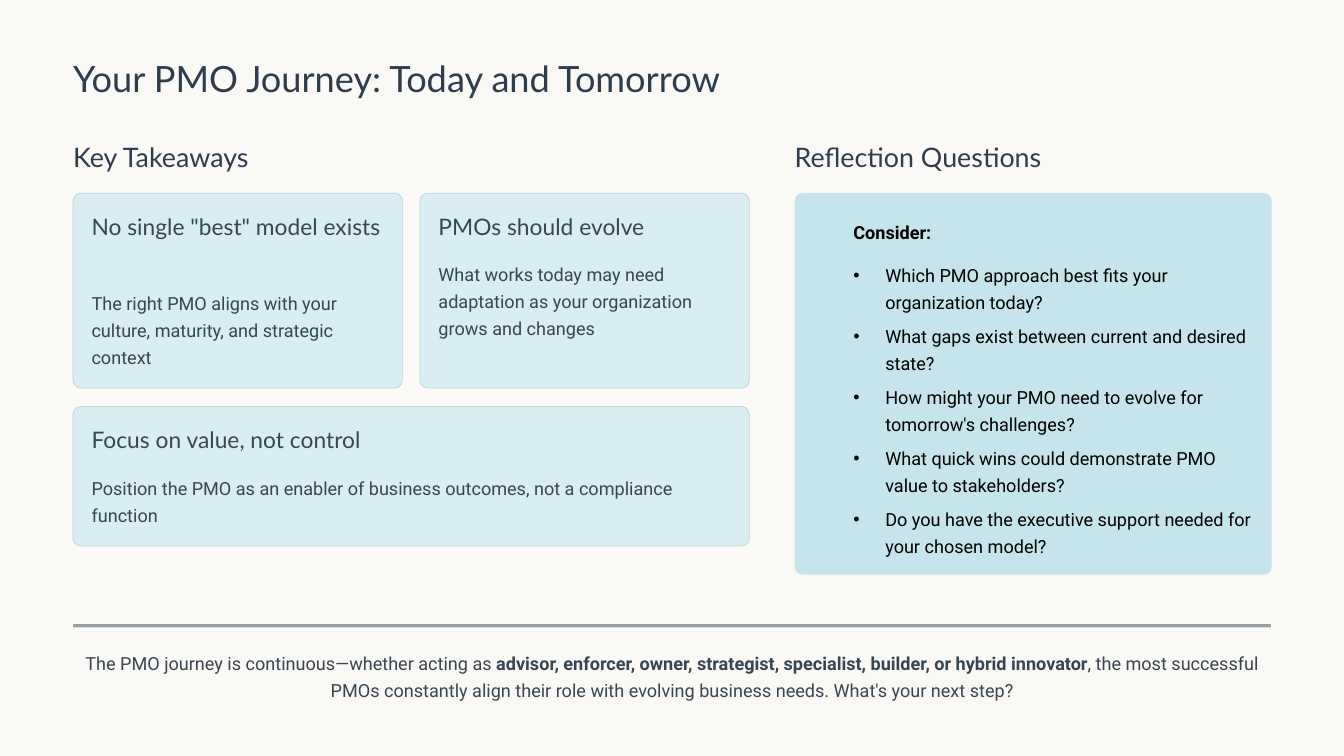
from lxml import etree
from pptx import Presentation
from pptx.dml.color import RGBColor
from pptx.enum.shapes import MSO_SHAPE
from pptx.enum.text import MSO_ANCHOR, MSO_AUTO_SIZE, PP_ALIGN
from pptx.oxml.ns import qn
from pptx.util import Inches, Pt

ROUNDED, RECTANGLE = MSO_SHAPE.ROUNDED_RECTANGLE, MSO_SHAPE.RECTANGLE
LEFT, CENTER = PP_ALIGN.LEFT, PP_ALIGN.CENTER
TOP = MSO_ANCHOR.TOP
NO_AUTOFIT = MSO_AUTO_SIZE.NONE

HEADING_FONT, BODY_FONT = "Lato", "Roboto"
PAPER, NAVY, SLATE, BLACK = "FAF9F5", "2E3C4E", "384653", "000000"
CARD_FILL, CARD_EDGE, PANEL_FILL = "D9EDF2", "BFD3D8", "C6E4EB"

# Font, size, line spacing
TITLE = (HEADING_FONT, 31, 39)
SECTION = (HEADING_FONT, 23, 29)
CARD_HEAD = (HEADING_FONT, 19.5, 24)
BODY = (BODY_FONT, 15.5, 23)

MARGIN = 0.87
PANEL_LEFT = 9.46
CARDS_TOP = 2.3
CARD_WIDTH, CARD_HEIGHT = 3.92, 2.32
CARD_GAP = 0.21
CARD_PAD = 0.22
CONTENT_WIDTH = 14.26


def rgb(value):
    return RGBColor.from_string(value)


class SlideBuilder:
    def __init__(self, slide):
        self.slide = slide
        slide.background.fill.solid()
        slide.background.fill.fore_color.rgb = rgb(PAPER)

    def place(self, holder, left, top, width, height):
        holder.left, holder.top = Inches(left), Inches(top)
        holder.width, holder.height = Inches(width), Inches(height)

    def frame(self, holder):
        frame = holder.text_frame
        frame.margin_left = frame.margin_right = 0
        frame.margin_top = frame.margin_bottom = 0
        frame.word_wrap = True
        frame.auto_size = NO_AUTOFIT
        frame.vertical_anchor = TOP
        return frame

    def style(self, paragraph, style, color, align=LEFT, bold=False):
        font_name, size, spacing = style
        paragraph.alignment = align
        paragraph.line_spacing = Pt(spacing)
        paragraph.space_before = Pt(0)
        font = paragraph.font
        font.name, font.size = font_name, Pt(size)
        font.color.rgb = rgb(color)
        if bold:
            font.bold = True

    def title(self, text, *box):
        title = self.slide.shapes.title
        self.place(title, *box)
        paragraph = self.frame(title).paragraphs[0]
        paragraph.text = text
        self.style(paragraph, TITLE, NAVY)

    def bullets(self, items, *box):
        body = self.slide.placeholders[1]
        self.place(body, *box)
        frame = self.frame(body)
        frame.text = "\n".join(items)
        for paragraph in frame.paragraphs:
            self.style(paragraph, BODY, BLACK)
            paragraph.space_after = Pt(6.35)
            properties = paragraph._p.get_or_add_pPr()
            properties.set("marL", str(Inches(0.38)))
            properties.set("indent", str(-Inches(0.38)))
            bullet = etree.Element(qn("a:buChar"), char="•")
            properties.find(qn("a:spcAft")).addnext(bullet)

    def text(self, runs, left, top, width, height, style, color,
             align=LEFT, bold=False):
        """runs is a string, or a list of (text, bold) pairs."""
        box = self.slide.shapes.add_textbox(
            Inches(left), Inches(top), Inches(width), Inches(height))
        paragraph = self.frame(box).paragraphs[0]
        self.style(paragraph, style, color, align, bold)
        if isinstance(runs, str):
            paragraph.text = runs
            return
        for words, strong in runs:
            run = paragraph.add_run()
            run.text = words
            run.font.bold = strong

    def shape(self, kind, left, top, width, height, fill, edge=None, radius=None):
        shape = self.slide.shapes.add_shape(
            kind, Inches(left), Inches(top), Inches(width), Inches(height))
        shape.shadow.inherit = False
        shape.fill.solid()
        shape.fill.fore_color.rgb = rgb(fill)
        if edge:
            shape.line.color.rgb = rgb(edge)
            shape.line.width = Pt(0.6)
        else:
            shape.line.fill.background()
        if radius:
            shape.adjustments[0] = radius / min(width, height)
        return shape

    def card(self, heading, detail, left, top, width, height, heading_height=0.34):
        self.shape(ROUNDED, left, top, width, height, CARD_FILL, CARD_EDGE, 0.09)
        text_left, text_top = left + CARD_PAD, top + CARD_PAD
        text_width = width - 2 * CARD_PAD
        detail_top = text_top + heading_height + CARD_PAD
        self.text(heading, text_left, text_top, text_width, heading_height,
                  CARD_HEAD, SLATE)
        self.text(detail, text_left, detail_top, text_width,
                  top + height - CARD_PAD - detail_top, BODY, SLATE)

    def rule(self, left, top, width, height):
        rule = self.shape(RECTANGLE, left, top, width, height, SLATE)
        color = rule.fill._xPr.find(qn("a:solidFill"))[0]
        etree.SubElement(color, qn("a:alpha"), val="50000")


def main():
    prs = Presentation()
    prs.slide_width, prs.slide_height = Inches(16), Inches(9)
    page = SlideBuilder(prs.slides.add_slide(prs.slide_layouts[1]))

    page.title("Your PMO Journey: Today and Tomorrow", MARGIN, 0.64, 9, 0.54)

    # Section headings
    for heading, left in (("Key Takeaways", MARGIN),
                          ("Reflection Questions", PANEL_LEFT)):
        page.text(heading, left, 1.65, 3.26, 0.41, SECTION, NAVY)

    # Takeaway cards
    page.card('No single "best" model exists',
              "The right PMO aligns with your culture, maturity, and strategic context",
              MARGIN, CARDS_TOP, CARD_WIDTH, CARD_HEIGHT, heading_height=0.68)
    page.card("PMOs should evolve",
              "What works today may need adaptation as your organization grows and changes",
              MARGIN + CARD_WIDTH + CARD_GAP, CARDS_TOP, CARD_WIDTH, CARD_HEIGHT)
    page.card("Focus on value, not control",
              "Position the PMO as an enabler of business outcomes, "
              "not a compliance function",
              MARGIN, CARDS_TOP + CARD_HEIGHT + CARD_PAD,
              2 * CARD_WIDTH + CARD_GAP, 1.66)

    # Reflection panel
    panel = page.shape(ROUNDED, PANEL_LEFT, CARDS_TOP, 5.68, 4.54,
                       PANEL_FILL, radius=0.09)
    page.text("Consider:", 10.16, 2.57, 4.76, 0.33, BODY, BLACK, bold=True)
    page.bullets([
        "Which PMO approach best fits your organization today?",
        "What gaps exist between current and desired state?",
        "How might your PMO need to evolve for tomorrow's challenges?",
        "What quick wins could demonstrate PMO value to stakeholders?",
        "Do you have the executive support needed for your chosen model?",
    ], 10.16, 3.09, 4.76, 3.56)
    # Panel goes behind the question list
    page.slide.shapes._spTree.insert(2, panel._element)

    # Closing message
    page.rule(MARGIN, 7.43, CONTENT_WIDTH, 0.04)
    page.text([
        ("The PMO journey is continuous—whether acting as ", False),
        ("advisor, enforcer, owner, strategist, specialist, builder, "
         "or hybrid innovator", True),
        (", the most successful PMOs constantly align their role with evolving "
         "business needs. What's your next step?", False),
    ], MARGIN, 7.71, CONTENT_WIDTH, 0.65, BODY, SLATE, CENTER)

    prs.save("out.pptx")


if __name__ == "__main__":
    main()
